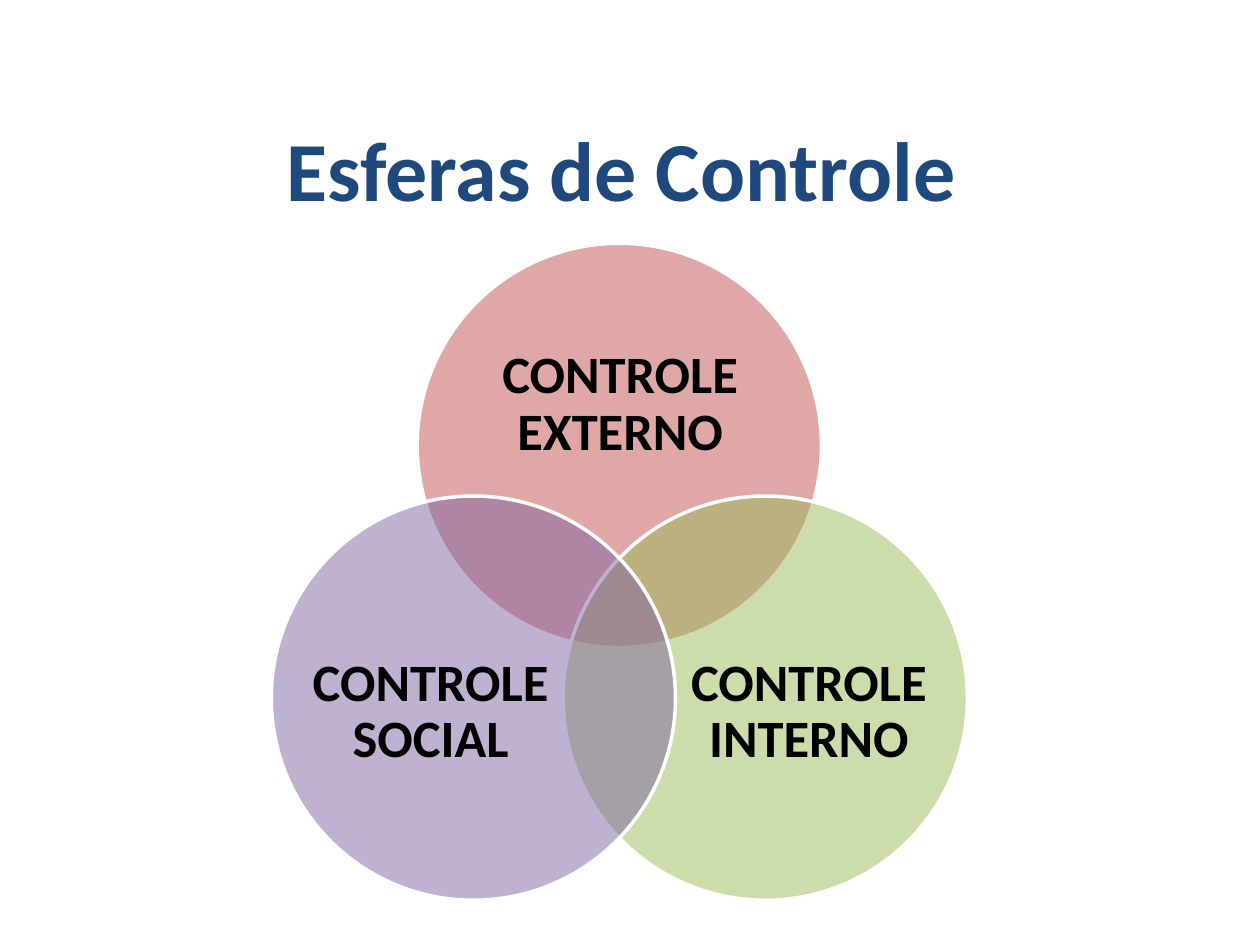
"""Build a slide with three overlapping spheres of control."""
from dataclasses import dataclass
from math import cos, radians, sin

from lxml.etree import SubElement
from pptx import Presentation
from pptx.dml.color import RGBColor
from pptx.enum.shapes import MSO_SHAPE
from pptx.enum.text import MSO_ANCHOR, PP_ALIGN
from pptx.oxml.ns import qn
from pptx.util import Pt


@dataclass(frozen=True)
class Theme:
    font: str = "Calibri"
    head: str = "1F497D"
    ink: str = "000000"
    edge: str = "FFFFFF"
    red: str = "C0504D"
    green: str = "9BBB59"
    violet: str = "8064A2"
    head_size: int = 48
    body_size: int = 30


THEME = Theme()
SIZE = 231
ORBIT = 96.3
MID_X, MID_Y = 353.9, 350.8


def add_disc(shapes, left, top, color):
    disc = shapes.add_shape(MSO_SHAPE.OVAL, Pt(left), Pt(top), Pt(SIZE), Pt(SIZE))
    disc.shadow.inherit = False
    disc.fill.solid()
    disc.fill.fore_color.rgb = RGBColor.from_string(color)
    tint = disc.fill._xPr.find(qn("a:solidFill"))[0]
    SubElement(tint, qn("a:alpha"), val="50000")
    disc.line.color.rgb = RGBColor.from_string(THEME.edge)
    disc.line.width = Pt(2)


def add_text(shapes, text, box, size, color, inset=None, spacing=None):
    frame = shapes.add_textbox(*map(Pt, box)).text_frame
    frame.word_wrap = True
    frame.vertical_anchor = MSO_ANCHOR.MIDDLE
    if inset is not None:
        frame.margin_left = frame.margin_right = Pt(inset)
        frame.margin_top = frame.margin_bottom = Pt(inset)
    frame.text = text
    para = frame.paragraphs[0]
    para.alignment = PP_ALIGN.CENTER
    para.line_spacing = spacing
    font = para.runs[0].font
    font.name, font.size, font.bold = THEME.font, Pt(size), True
    font.color.rgb = RGBColor.from_string(color)


def add_sphere(shapes, text, color, angle, area):
    left = MID_X + ORBIT * cos(radians(angle)) - SIZE / 2
    top = MID_Y + ORBIT * sin(radians(angle)) - SIZE / 2
    add_disc(shapes, left, top, color)
    dx, dy, width, height = area
    add_text(shapes, text, (left + dx, top + dy, width, height),
             THEME.body_size, THEME.ink, inset=0, spacing=0.9)


def main():
    deck = Presentation()
    deck.slide_width, deck.slide_height = Pt(720), Pt(540)
    slide = deck.slides.add_slide(deck.slide_layouts[6])
    venn = slide.shapes.add_group_shape().shapes
    spheres = [
        ("CONTROLE EXTERNO", THEME.red, -90, (31, 40.3, 170, 104.4)),
        ("CONTROLE INTERNO", THEME.green, 30, (71, 60, 139, 127.4)),
        ("CONTROLE SOCIAL", THEME.violet, 150, (21.6, 60, 139, 127.4)),
    ]
    for sphere in spheres:
        add_sphere(venn, *sphere)
    add_text(slide.shapes, "Esferas de Controle", (31, 60.5, 648, 71.3),
             THEME.head_size, THEME.head)
    deck.save("out.pptx")


if __name__ == "__main__":
    main()
